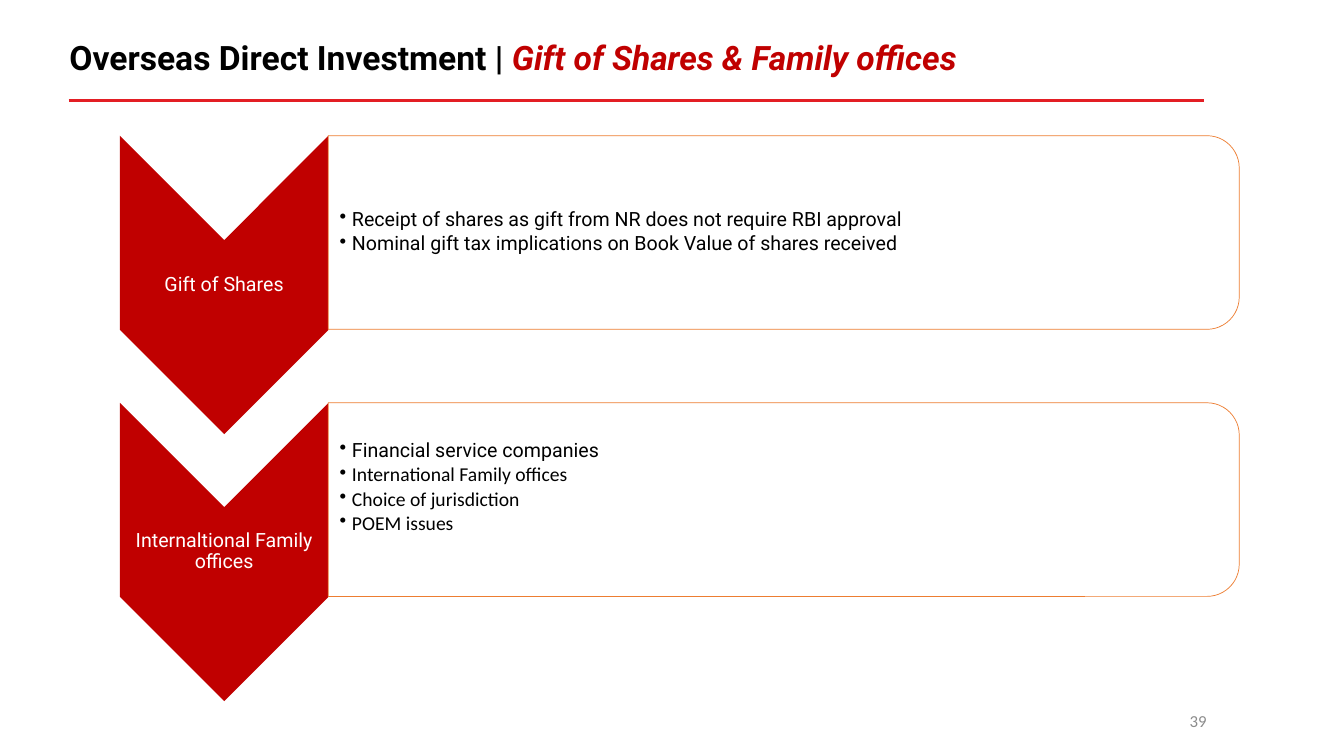
from lxml.etree import SubElement as Sub
from pptx import Presentation
from pptx.dml.color import RGBColor
from pptx.enum.shapes import MSO_CONNECTOR as Link, MSO_SHAPE as Kind
from pptx.enum.text import MSO_ANCHOR as Anchor, PP_ALIGN as Align
from pptx.oxml.ns import qn
from pptx.util import Cm, Pt

RED = "C00000"
STEP = 6.73
ROWS = [
    ("Gift of Shares", 0.03, [
        ("Receipt of shares as gift from NR does not require RBI approval", "Roboto"),
        ("Nominal gift tax implications on Book Value of shares received", "Roboto"),
    ]),
    ("Internaltional Family offices", 0.63, [
        ("Financial service companies", "Roboto"),
        ("International Family offices", "Calibri"),
        ("Choice of jurisdiction", "Calibri"),
        ("POEM issues", "Calibri"),
    ]),
]


def tint(code):
    """Turn a hex string into a colour."""
    return RGBColor.from_string(code)


def style(run, size, name, code, bold=False, slant=False):
    """Set the font of a run."""
    font = run.font
    font.size, font.name = Pt(size), name
    font.bold, font.italic = bold, slant
    font.color.rgb = tint(code)


def add_box(slide, left, top, wide, high, pads=None):
    """Add a wrapped, middle-anchored text box and return its frame."""
    box = slide.shapes.add_textbox(Cm(left), Cm(top), Cm(wide), Cm(high))
    frame = box.text_frame
    frame.word_wrap = True
    frame.vertical_anchor = Anchor.MIDDLE
    if pads:
        (frame.margin_left, frame.margin_top,
         frame.margin_right, frame.margin_bottom) = map(Cm, pads)
    return frame


def add_turned(slide, kind, left, top, wide, high, code):
    """Add a shape turned by 90 degrees that covers the given area."""
    shift = (wide - high) / 2
    shape = slide.shapes.add_shape(
        kind, Cm(left + shift), Cm(top - shift), Cm(high), Cm(wide))
    shape.rotation = 90
    shape.shadow.inherit = False
    shape.fill.solid()
    shape.fill.fore_color.rgb = tint(code)
    shape.line.fill.background()
    return shape


def add_panel(slide, top):
    """Add the outlined panel with a slightly clear white fill."""
    panel = add_turned(slide, Kind.ROUND_2_SAME_RECTANGLE,
                       8.27, top, 22.96, 4.88, "FFFFFF")
    panel.line.color.rgb = tint("ED7D31")
    panel.line.width = Pt(0.5)
    fill = panel.fill._xPr.find(qn("a:solidFill"))
    Sub(fill[0], qn("a:alpha"), val="90000")


def add_label(slide, top, text):
    """Add the white caption of a chevron."""
    frame = add_box(slide, 3.02, top, 5.26, 2.26, [0.03] * 4)
    frame.text = text
    para = frame.paragraphs[0]
    para.alignment = Align.CENTER
    para.line_spacing = 0.9
    style(para.runs[0], 14, "Roboto", "FFFFFF")


def add_points(slide, top, items, foot):
    """Add a bulleted list with the given bottom inset."""
    frame = add_box(slide, 8.28, top, 22.71, 4.4, [0.28, 0.03, 0.03, foot])
    frame.text = "\n".join(text for text, name in items)
    for para, (text, name) in zip(frame.paragraphs, items):
        para.alignment = Align.JUSTIFY
        para.line_spacing = 0.9
        para.space_after = Pt(2.1)
        props = para._p.get_or_add_pPr()
        props.set("marL", str(Cm(0.31)))
        props.set("indent", str(Cm(-0.31)))
        Sub(props, qn("a:buChar"), char="•")
        style(para.runs[0], 14, name, "000000")


def add_row(slide, top, label, foot, items):
    """Add one chevron with its panel and list."""
    add_turned(slide, Kind.CHEVRON, 3.02, top, 5.26, 7.52, RED)
    add_label(slide, top + 2.63, label)
    add_panel(slide, top)
    add_points(slide, top + 0.24, items, foot)


def add_title(slide):
    """Add the two-tone title."""
    para = add_box(slide, 0.99, 0.64, 28.78, 1.75).paragraphs[0]
    para.line_spacing = 0.9
    para._p.get_or_add_pPr().set("marL", str(Cm(0.51)))
    for text, code, slant in [
        ("Overseas Direct Investment | ", "000000", False),
        ("Gift of Shares & Family offices", RED, True),
    ]:
        run = para.add_run()
        run.text = text
        style(run, 24, "Roboto", code, True, slant)


def add_rule(slide):
    """Add the red line below the title."""
    rule = slide.shapes.add_connector(
        Link.STRAIGHT, Cm(1.73), Cm(2.54), Cm(30.35), Cm(2.54))
    rule.line.color.rgb = tint("E31E24")
    rule.line.width = Pt(2.25)
    Sub(rule._element.spPr, qn("a:effectLst"))


def add_number(slide, text):
    """Add the page number."""
    frame = add_box(slide, 23.55, 17.65, 7.11, 1.02)
    frame.text = text
    para = frame.paragraphs[0]
    para.alignment = Align.RIGHT
    style(para.runs[0], 12, "Calibri", "8C8C8C")


def main():
    """Build the slide and save it."""
    deck = Presentation()
    deck.slide_width, deck.slide_height = Cm(33.87), Cm(19.05)
    slide = deck.slides.add_slide(deck.slide_layouts[6])
    for rank, (label, foot, items) in enumerate(ROWS):
        add_row(slide, 3.42 + rank * STEP, label, foot, items)
    add_number(slide, "39")
    add_title(slide)
    add_rule(slide)
    deck.save("out.pptx")


if __name__ == "__main__":
    main()
